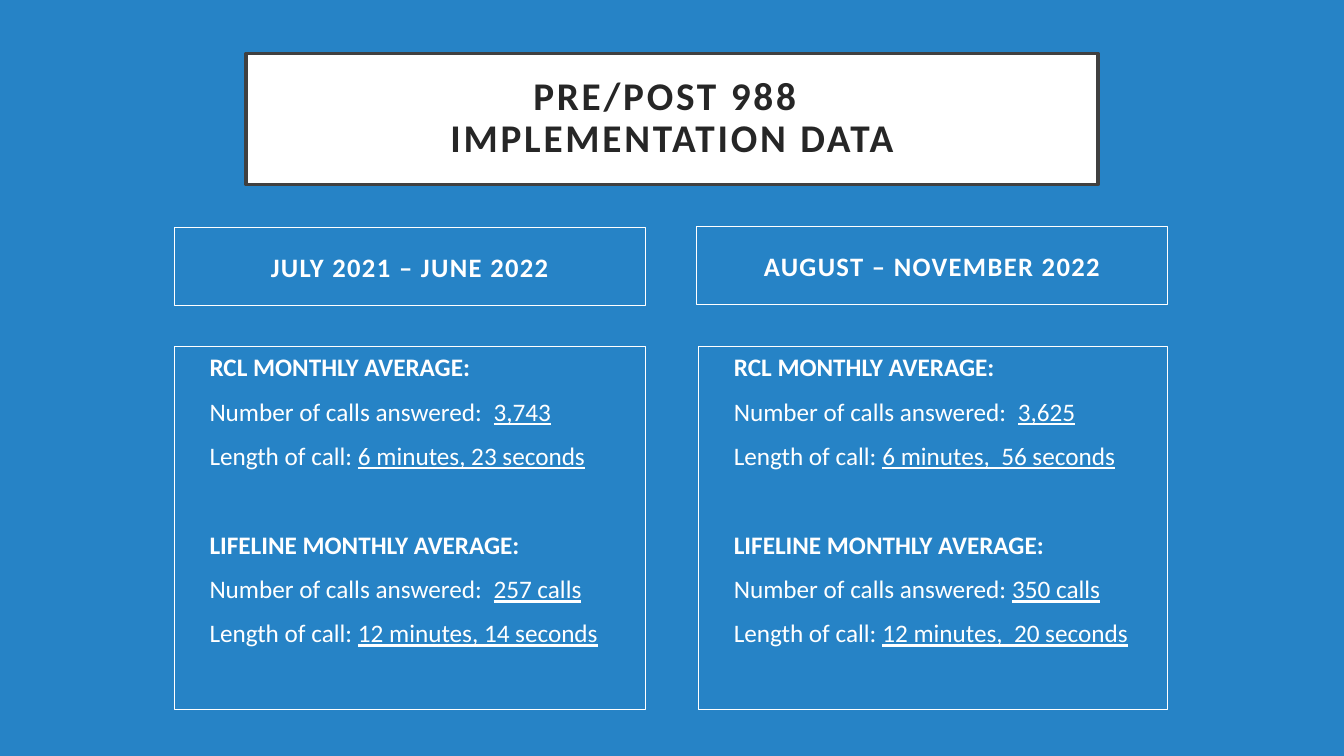
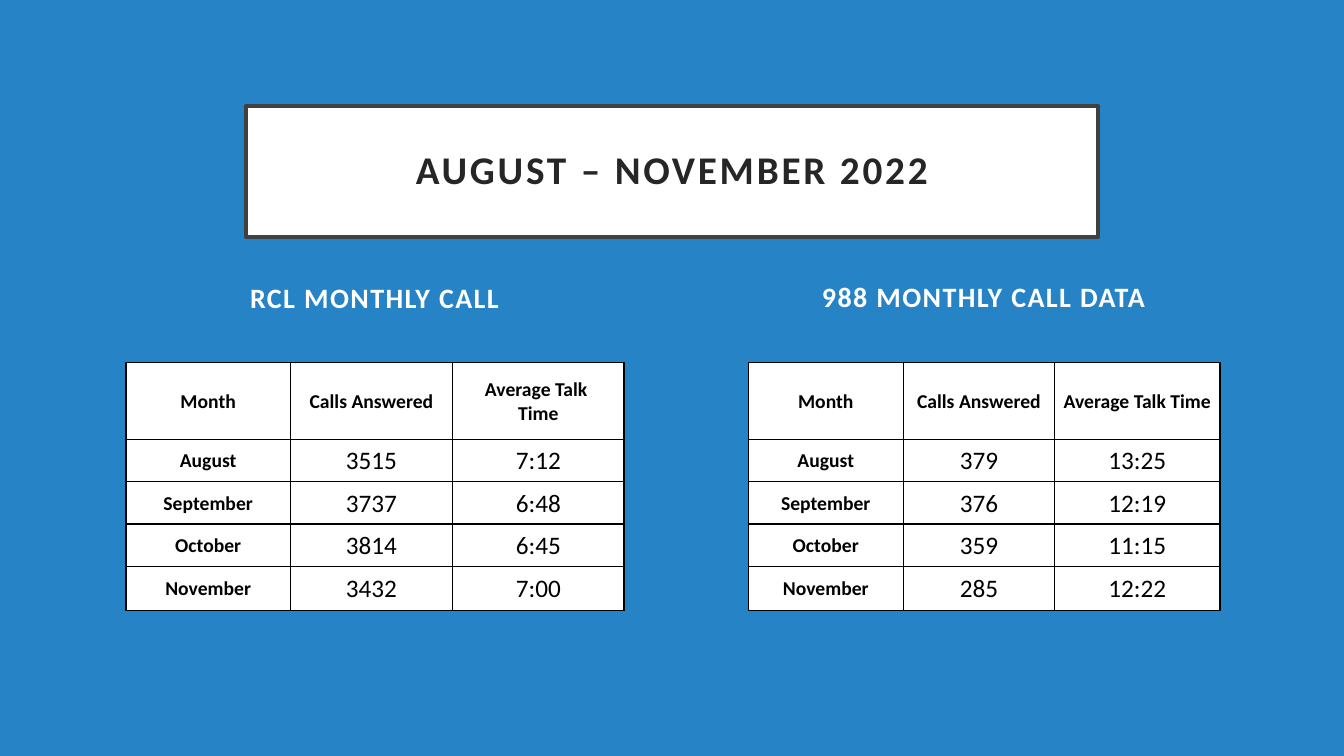
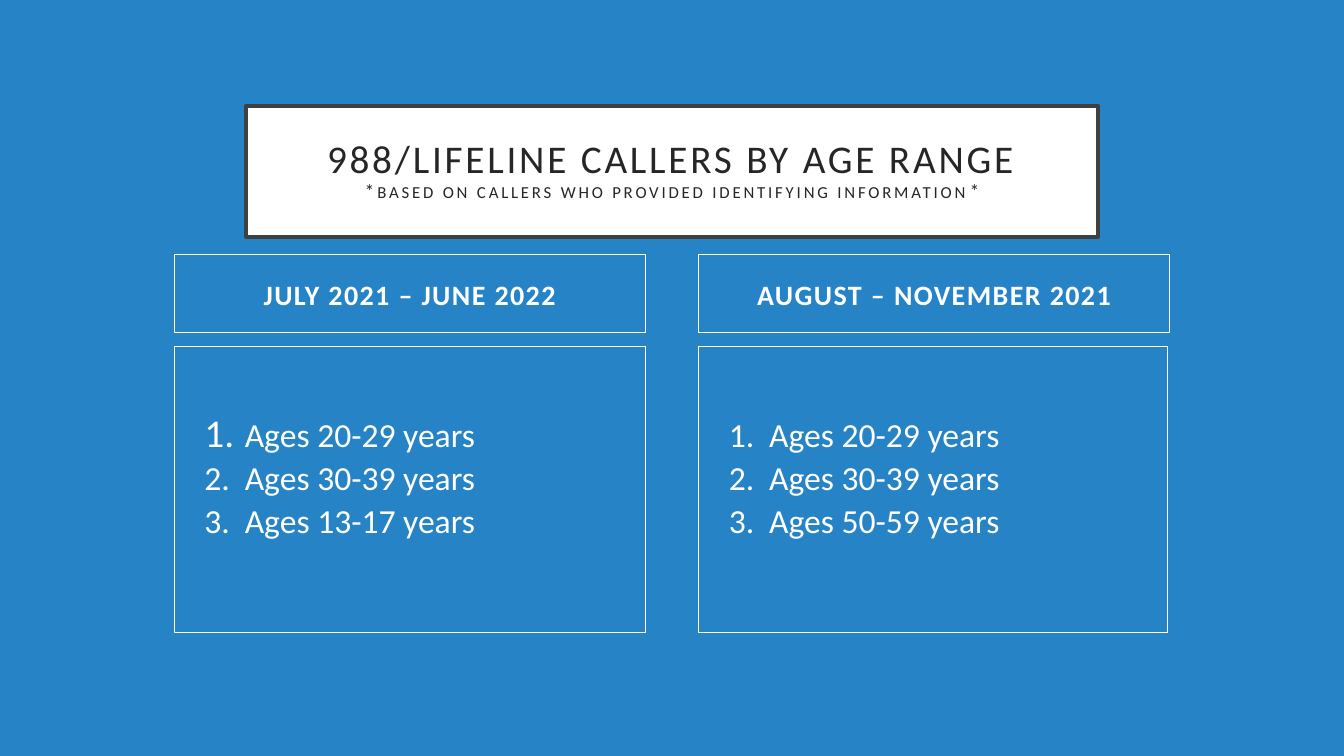
"""Build three slides comparing call data before and after the 988 launch."""
from typing import NamedTuple

import lxml.etree
import pptx
import pptx.dml.color
import pptx.enum.shapes
import pptx.enum.text
import pptx.oxml.ns
import pptx.shapes.autoshape
import pptx.slide
import pptx.util

Inches = pptx.util.Inches
Pt = pptx.util.Pt
ALIGN = pptx.enum.text.PP_ALIGN
ANCHOR = pptx.enum.text.MSO_ANCHOR

COLORS = {
    "background": "2683C6",
    "white": "FFFFFF",
    "frame": "404040",
    "title": "262626",
    "black": "000000",
}
FONT = "Calibri"
LEFT, RIGHT = 1.73, 6.93
HEADING_WIDTH, HEADING_HEIGHT = 4.67, 0.77
BODY_TOP = 3.44


class Box(NamedTuple):
    left: float
    top: float
    width: float
    height: float


class Heading(NamedTuple):
    text: str
    left: float
    top: float
    size: int = 20
    framed: bool = True


class CallSummary(NamedTuple):
    title: str
    answered_label: str
    answered: str
    length: str


class SummaryPanel(NamedTuple):
    box: Box
    summaries: list[CallSummary]


class AgePanel(NamedTuple):
    box: Box
    ages: list[str]
    first_number_scale: int = 100


class CallTable(NamedTuple):
    left: float
    columns: list[float]
    talk_time_label: str
    months: list[tuple[str, str, str]]


SUMMARY_HEADINGS = [
    Heading("JULY 2021 – JUNE 2022", LEFT, 2.26, 19),
    Heading("AUGUST – NOVEMBER 2022", 6.91, 2.25, 19),
]
SUMMARY_PANELS = [
    SummaryPanel(Box(LEFT, BODY_TOP, 4.67, 3.6), [
        CallSummary("RCL MONTHLY AVERAGE:", "Number of calls answered:  ",
                    "3,743", "6 minutes, 23 seconds"),
        CallSummary("LIFELINE MONTHLY AVERAGE:", "Number of calls answered:  ",
                    "257 calls", "12 minutes, 14 seconds"),
    ]),
    SummaryPanel(Box(RIGHT, BODY_TOP, 4.65, 3.6), [
        CallSummary("RCL MONTHLY AVERAGE:", "Number of calls answered:  ",
                    "3,625", "6 minutes,  56 seconds"),
        CallSummary("LIFELINE MONTHLY AVERAGE:", "Number of calls answered: ",
                    "350 calls", "12 minutes,  20 seconds"),
    ]),
]
TABLE_HEADINGS = [
    Heading("RCL MONTHLY CALL", 1.38, 2.56, framed=False),
    Heading("988 MONTHLY CALL DATA", 7.42, 2.55, framed=False),
]
TABLE_TOP = 3.6
ROW_HEIGHTS = [0.76, 0.42, 0.42, 0.42, 0.44]
CALL_TABLES = [
    CallTable(1.25, [1.63, 1.61, 1.7], "Average Talk \nTime", [
        ("August", "3515", "7:12"),
        ("September", "3737", "6:48"),
        ("October", "3814", "6:45"),
        ("November", "3432", "7:00"),
    ]),
    CallTable(7.42, [1.54, 1.5, 1.64], "Average Talk Time", [
        ("August", "379", "13:25"),
        ("September", "376", "12:19"),
        ("October", "359", "11:15"),
        ("November", "285", "12:22"),
    ]),
]
AGE_HEADINGS = [
    Heading("JULY 2021 – JUNE 2022", LEFT, 2.53),
    Heading("AUGUST – NOVEMBER 2021", RIGHT, 2.53),
]
AGE_PANELS = [
    AgePanel(Box(LEFT, BODY_TOP, 4.67, 2.84),
             ["Ages 20-29 years", "Ages 30-39 years", "Ages 13-17 years"], 117),
    AgePanel(Box(RIGHT, BODY_TOP, 4.65, 2.84),
             ["Ages 20-29 years", "Ages 30-39 years", "Ages 50-59 years"]),
]


def rgb(name: str) -> pptx.dml.color.RGBColor:
    return pptx.dml.color.RGBColor.from_string(COLORS[name])


def style(paragraph, size: float, color: str = "white", bold: bool = False,
          spacing: int = 0, align: ALIGN = ALIGN.LEFT) -> None:
    paragraph.alignment = align
    font = paragraph.font
    font.name, font.size, font.bold = FONT, Pt(size), bold
    font.color.rgb = rgb(color)
    if spacing:
        defaults = paragraph._p.get_or_add_pPr().get_or_add_defRPr()
        defaults.set("spc", str(spacing * 100))


def indent(paragraph, left: float, first: float = 0) -> None:
    properties = paragraph._p.get_or_add_pPr()
    properties.set("marL", str(Inches(left)))
    properties.set("indent", str(Inches(first)))


def number(paragraph, scale: int) -> None:
    properties = paragraph._p.get_or_add_pPr()
    numbering = lxml.etree.Element(pptx.oxml.ns.qn("a:buAutoNum"), type="arabicPeriod")
    size = lxml.etree.Element(pptx.oxml.ns.qn("a:buSzPct"), val=str(scale * 1000))
    defaults = properties.get_or_add_defRPr()
    defaults.addprevious(size)
    defaults.addprevious(numbering)


def add_panel(slide: pptx.slide.Slide, box: Box, line: str | None = "white",
              line_width: float = 0.75, fill: str | None = None,
              anchor: ANCHOR = ANCHOR.MIDDLE) -> pptx.shapes.autoshape.Shape:
    panel = slide.shapes.add_shape(pptx.enum.shapes.MSO_SHAPE.RECTANGLE,
                                   *(Inches(length) for length in box))
    panel.shadow.inherit = False
    if fill:
        panel.fill.solid()
        panel.fill.fore_color.rgb = rgb(fill)
    else:
        panel.fill.background()
    if line:
        panel.line.color.rgb = rgb(line)
        panel.line.width = Pt(line_width)
    else:
        panel.line.fill.background()
    panel.text_frame.word_wrap = True
    panel.text_frame.vertical_anchor = anchor
    return panel


def add_title(slide: pptx.slide.Slide, text: str, top: float = 1.05, bold: bool = True,
              note: str = "") -> None:
    frame = add_panel(slide, Box(2.44, top, 8.45, 1.3), "frame", 2.5, "white").text_frame
    frame.margin_left = frame.margin_right = Inches(0.2)
    frame.margin_top = frame.margin_bottom = Inches(0.2)
    title = frame.paragraphs[0]
    title.text = text
    title.line_spacing = 0.9
    style(title, 28, "title", bold, 2, ALIGN.CENTER)
    if note:
        title.add_line_break()
        for part, size in (("*", 14), (note, 12), ("*", 14)):
            run = title.add_run()
            run.text = part
            run.font.size = Pt(size)


def add_heading(slide: pptx.slide.Slide, heading: Heading) -> None:
    box = Box(heading.left, heading.top, HEADING_WIDTH, HEADING_HEIGHT)
    panel = add_panel(slide, box, "white" if heading.framed else None)
    period = panel.text_frame.paragraphs[0]
    period.text = heading.text
    style(period, heading.size, bold=True, spacing=1, align=ALIGN.CENTER)


def add_summaries(slide: pptx.slide.Slide, panel: SummaryPanel) -> None:
    frame = add_panel(slide, panel.box, anchor=ANCHOR.TOP).text_frame
    for index, summary in enumerate(panel.summaries):
        title = frame.add_paragraph() if index else frame.paragraphs[0]
        title.text = summary.title
        title.space_before = Pt(42 if index else 0)
        style(title, 18, bold=True)
        indent(title, 0.25)
        for label, value in ((summary.answered_label, summary.answered),
                             ("Length of call: ", summary.length)):
            fact = frame.add_paragraph()
            fact.space_before = Pt(10)
            style(fact, 18)
            indent(fact, 0.25)
            fact.add_run().text = label
            figure = fact.add_run()
            figure.text = value
            figure.font.underline = True


def add_ages(slide: pptx.slide.Slide, panel: AgePanel) -> None:
    frame = add_panel(slide, panel.box).text_frame
    frame.margin_bottom = Inches(0.33)
    for index, age in enumerate(panel.ages):
        entry = frame.add_paragraph() if index else frame.paragraphs[0]
        entry.text = age
        entry.line_spacing = 1.07
        style(entry, 24)
        indent(entry, 0.6, -0.4)
        number(entry, 100 if index else panel.first_number_scale)


def add_borders(cell) -> None:
    properties = cell._tc.get_or_add_tcPr()
    for side in ("lnL", "lnR", "lnT", "lnB"):
        border = lxml.etree.SubElement(properties, pptx.oxml.ns.qn(f"a:{side}"),
                                       w=str(Pt(1)))
        fill = lxml.etree.SubElement(border, pptx.oxml.ns.qn("a:solidFill"))
        lxml.etree.SubElement(fill, pptx.oxml.ns.qn("a:srgbClr"), val=COLORS["black"])


def add_calls(slide: pptx.slide.Slide, calls: CallTable) -> None:
    rows = [("Month", "Calls Answered", calls.talk_time_label), *calls.months]
    grid = slide.shapes.add_table(
        len(rows), len(calls.columns), Inches(calls.left), Inches(TABLE_TOP),
        Inches(sum(calls.columns)), Inches(sum(ROW_HEIGHTS))).table
    for column, width in zip(grid.columns, calls.columns):
        column.width = Inches(width)
    for row, height in zip(grid.rows, ROW_HEIGHTS):
        row.height = Inches(height)
    for row_index, values in enumerate(rows):
        for column_index, value in enumerate(values):
            cell = grid.cell(row_index, column_index)
            add_borders(cell)
            cell.fill.solid()
            cell.fill.fore_color.rgb = rgb("white")
            cell.vertical_anchor = ANCHOR.MIDDLE
            cell.margin_left = cell.margin_right = cell.margin_top = Inches(0.01)
            cell.margin_bottom = Inches(0)
            cell.text = value
            is_label = row_index == 0 or column_index == 0
            for paragraph in cell.text_frame.paragraphs:
                style(paragraph, 14 if is_label else 18, "black", is_label,
                      align=ALIGN.CENTER)


def add_slide(deck, headings: list[Heading]) -> pptx.slide.Slide:
    slide = deck.slides.add_slide(deck.slide_layouts[6])
    slide.background.fill.solid()
    slide.background.fill.fore_color.rgb = rgb("background")
    for heading in headings:
        add_heading(slide, heading)
    return slide


def main() -> None:
    deck = pptx.Presentation()
    deck.slide_width, deck.slide_height = Inches(13.33), Inches(7.5)

    averages = add_slide(deck, SUMMARY_HEADINGS)
    add_title(averages, "PRE/POST 988 \vIMPLEMENTATION DATA", top=0.53)
    for panel in SUMMARY_PANELS:
        add_summaries(averages, panel)

    monthly = add_slide(deck, TABLE_HEADINGS)
    add_title(monthly, "AUGUST – NOVEMBER 2022")
    for calls in CALL_TABLES:
        add_calls(monthly, calls)

    callers = add_slide(deck, AGE_HEADINGS)
    add_title(callers, "988/LIFELINE CALLERS BY AGE RANGE", bold=False,
              note="BASED ON CALLERS WHO PROVIDED IDENTIFYING INFORMATION")
    for panel in AGE_PANELS:
        add_ages(callers, panel)

    deck.save("out.pptx")


if __name__ == "__main__":
    main()
